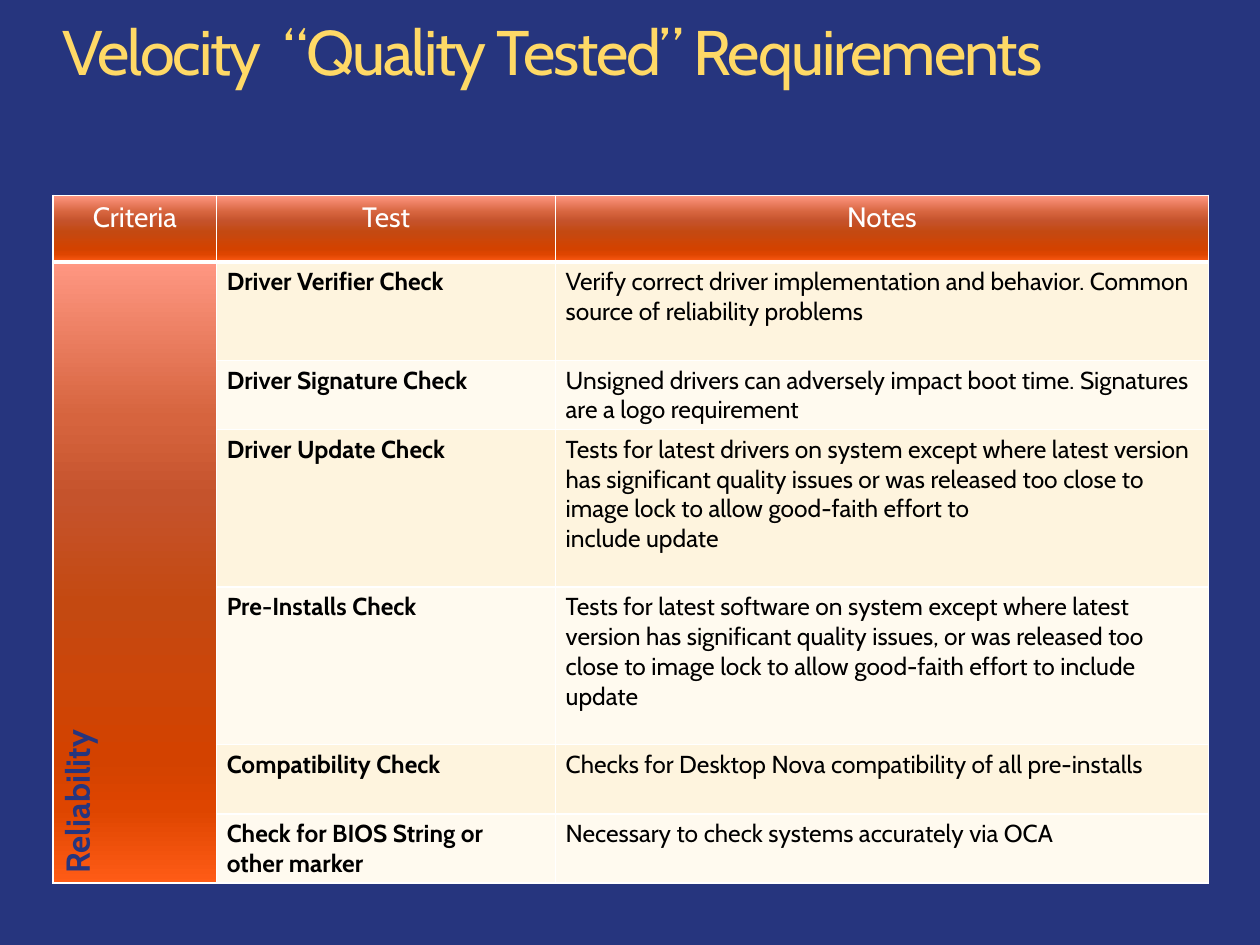
from copy import deepcopy

from lxml.etree import SubElement
from pptx import Presentation
from pptx.dml.color import RGBColor
from pptx.enum.text import MSO_ANCHOR, PP_ALIGN
from pptx.oxml.ns import qn
from pptx.util import Inches, Pt

FONT = "Cabin"
COLORS = {
    "navy": "26357E", "gold": "FFD966", "white": "FFFFFF", "black": "000000",
    "cream": "FEF4DE", "ivory": "FFFAEF",
}
ORANGE_STOPS = [
    (0, "FF9782"), (25, "D6643E"), (38, "C5532C"), (55, "C44911"),
    (80, "D34200"), (88, "DE4500"), (100, "FF5C16"),
]
COL_WIDTHS = [1.3, 2.69, 5.18]
HEADER_HEIGHT = 0.53
HEADERS = ["Criteria", "Test", "Notes"]
CHECKS = [  # row height, test, notes
    (0.78, "Driver Verifier Check",
     "Verify correct driver implementation and behavior. Common source of "
     "reliability problems"),
    (0.55, "Driver Signature Check",
     "Unsigned drivers can adversely impact boot time. Signatures are a logo "
     "requirement"),
    (1.25, "Driver Update Check",
     "Tests for latest drivers on system except where latest version has "
     "significant quality issues or was released too close to image lock to "
     "allow good-faith effort to \ninclude update"),
    (1.25, "Pre-Installs Check",
     "Tests for latest software on system except where latest version has "
     "significant quality issues, or was released too close to image lock to "
     "allow good-faith effort to include update"),
    (0.55, "Compatibility Check",
     "Checks for Desktop Nova compatibility of all pre-installs"),
    (0.55, "Check for BIOS String or other marker",
     "Necessary to check systems accurately via OCA"),
]


def rgb(name):
    return RGBColor.from_string(COLORS[name])


def write(tf, text, size, color, bold=False, align=PP_ALIGN.LEFT,
          line_spacing=None, tracking=None):
    p = tf.paragraphs[0]
    p.alignment = align
    if line_spacing:
        p.line_spacing = line_spacing
    for i, line in enumerate(text.split("\n")):
        if i:
            p.add_line_break()
        r = p.add_run()
        r.text = line
        r.font.name = FONT
        r.font.size = Pt(size)
        r.font.bold = bold
        r.font.color.rgb = rgb(color)
        if tracking:
            r.font._element.set("spc", str(round(tracking * 100)))
    # Line breaks take the size of the text around them
    for br in p._p.findall(qn("a:br")):
        br.append(deepcopy(p.runs[0].font._element))


def add_borders(cell, **widths):
    """Draw white borders; widths in points by side (L, R, T, B), 1 if not given."""
    tcPr = cell._tc.get_or_add_tcPr()
    for side in "LRTB":
        ln = SubElement(tcPr, qn(f"a:ln{side}"), w=str(Pt(widths.get(side, 1))))
        fill = SubElement(ln, qn("a:solidFill"))
        SubElement(fill, qn("a:srgbClr"), val=COLORS["white"])


def fill_solid(cell, color):
    cell.fill.solid()
    cell.fill.fore_color.rgb = rgb(color)


def fill_orange(cell):
    cell.fill.gradient()
    cell.fill.gradient_angle = 270
    stops = cell._tc.tcPr.find(qn("a:gradFill")).find(qn("a:gsLst"))
    for gs in list(stops):
        stops.remove(gs)
    for pos, color in ORANGE_STOPS:
        gs = SubElement(stops, qn("a:gs"), pos=str(pos * 1000))
        SubElement(gs, qn("a:srgbClr"), val=color)


def add_title(s, left, top, width, height):
    tf = s.shapes.add_textbox(left, top, width, height).text_frame
    tf.word_wrap = True
    tf.margin_left = tf.margin_right = tf.margin_top = tf.margin_bottom = 0
    write(tf, "Velocity  “Quality Tested” Requirements", 36, "gold",
          line_spacing=0.9, tracking=-1.2)


def add_requirements(s, left, top, width, height):
    table = s.shapes.add_table(len(CHECKS) + 1, len(HEADERS),
                               left, top, width, height).table
    for col, w in zip(table.columns, COL_WIDTHS):
        col.width = Inches(w)
    heights = [HEADER_HEIGHT] + [check[0] for check in CHECKS]
    for i, (row, h) in enumerate(zip(table.rows, heights)):
        row.height = Inches(h)
        for cell in row.cells:
            cell.margin_left = cell.margin_right = Inches(0.08)
            cell.margin_top = cell.margin_bottom = Inches(0.04)
            add_borders(cell, **({"B": 3} if i == 0 else {"T": 3} if i == 1 else {}))

    for cell, text in zip(table.rows[0].cells, HEADERS):
        fill_orange(cell)
        write(cell.text_frame, text, 16, "white", align=PP_ALIGN.CENTER)

    criteria = table.cell(1, 0)
    criteria.merge(table.cell(len(CHECKS), 0))
    criteria.vertical_anchor = MSO_ANCHOR.MIDDLE
    criteria._tc.tcPr.set("vert", "vert270")
    fill_orange(criteria)
    write(criteria.text_frame, "Reliability", 19, "navy", bold=True)

    for i, (_, test, notes) in enumerate(CHECKS, start=1):
        for j, text in enumerate((test, notes), start=1):
            cell = table.cell(i, j)
            fill_solid(cell, "cream" if i % 2 else "ivory")
            write(cell.text_frame, text, 14, "black", bold=j == 1)


def main():
    prs = Presentation()
    prs.slide_width, prs.slide_height = Inches(10), Inches(7.5)
    s = prs.slides.add_slide(prs.slide_layouts[6])
    s.background.fill.solid()
    s.background.fill.fore_color.rgb = rgb("navy")
    add_title(s, Inches(0.5), Inches(0.17), Inches(9), Inches(1.25))
    add_requirements(s, Inches(0.42), Inches(1.55), Inches(9.17), Inches(5.45))
    prs.save("out.pptx")


if __name__ == "__main__":
    main()
